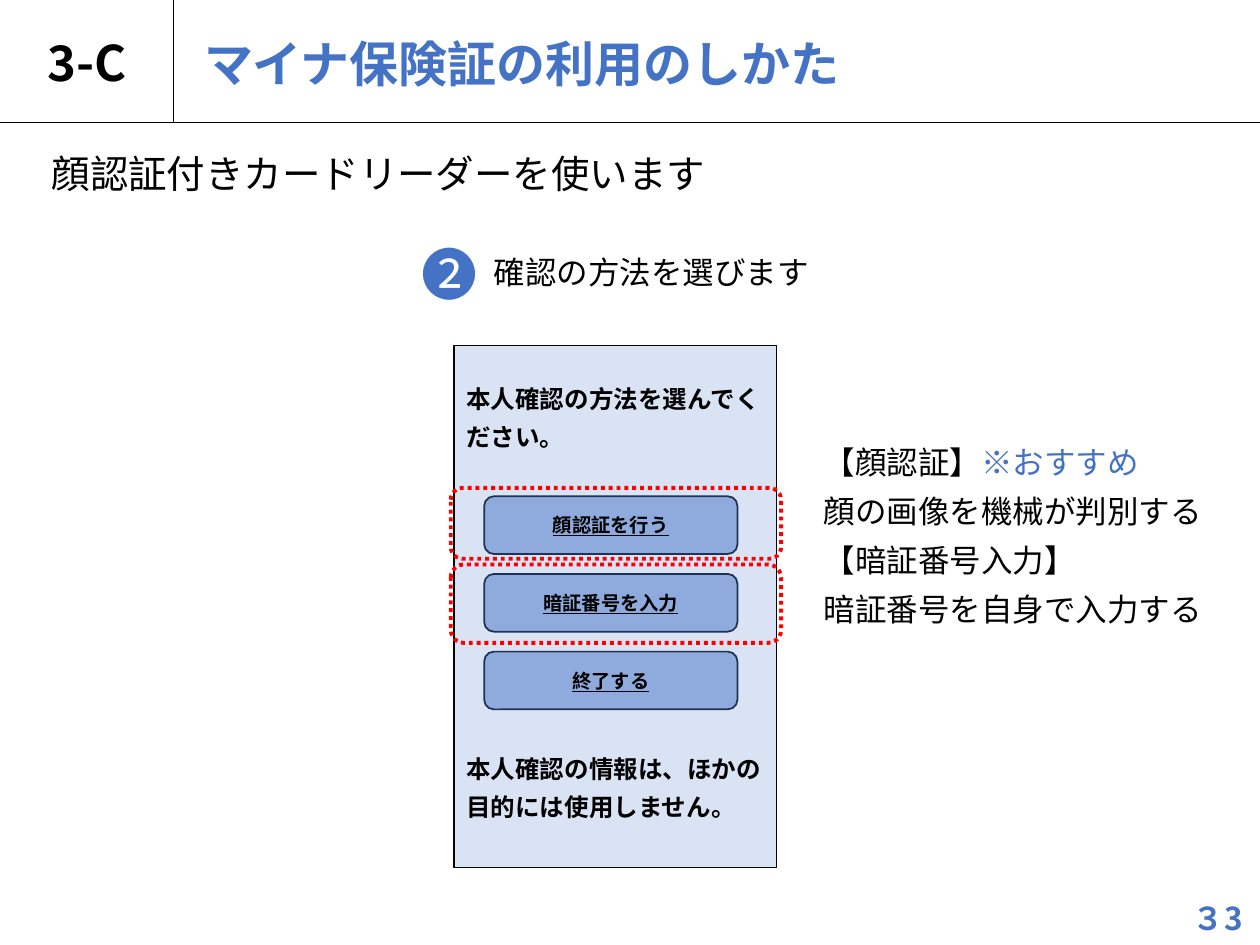
from lxml import etree
from pptx import Presentation
from pptx.dml.color import RGBColor
from pptx.enum import dml, shapes, text
from pptx.oxml.ns import qn
from pptx.util import Pt

FONT = "Noto Sans CJK JP"
BLACK, BLUE, RED = "000000", "4472C4", "FF0000"
PANEL, BUTTON, EDGE = "DAE3F3", "8FAADC", "1E3256"
LEFT, CENTER = text.PP_ALIGN.LEFT, text.PP_ALIGN.CENTER
TOP, MIDDLE, BOTTOM = text.MSO_ANCHOR.TOP, text.MSO_ANCHOR.MIDDLE, text.MSO_ANCHOR.BOTTOM


def rgb(value):
    return RGBColor.from_string(value)


def add_run(p, words, size=18, color=BLACK, bold=False, underline=False):
    r = p.add_run()
    r.text = words
    f = r.font
    f.size, f.name, f.bold, f.underline = Pt(size), FONT, bold, underline
    f.color.rgb = rgb(color)
    etree.SubElement(r._r.get_or_add_rPr(), qn("a:ea")).set("typeface", FONT)


def write(tf, paragraphs, align=LEFT, anchor=TOP, spacing=None, gap=0, wrap=True, **style):
    tf.auto_size = text.MSO_AUTO_SIZE.NONE
    tf.word_wrap = wrap
    tf.vertical_anchor = anchor
    for i, runs in enumerate(paragraphs):
        p = tf.add_paragraph() if i else tf.paragraphs[0]
        p.alignment = align
        p.space_before = Pt(gap if i else 0)
        if spacing:
            p.line_spacing = spacing
        for words, color in [(runs, BLACK)] if isinstance(runs, str) else runs:
            add_run(p, words, **{"color": color, **style})


class Deck:
    def __init__(self):
        self.prs = Presentation()
        self.prs.slide_width, self.prs.slide_height = Pt(720), Pt(540)
        self.s = self.prs.slides.add_slide(self.prs.slide_layouts[0])

    def placeholder(self, index, x, y, w, h, words, **style):
        sp = self.s.placeholders[index]
        sp.left, sp.top, sp.width, sp.height = Pt(x), Pt(y), Pt(w), Pt(h)
        write(sp.text_frame, [words], spacing=0.9, **style)

    def label(self, x, y, w, h, *paragraphs, **style):
        sp = self.s.shapes.add_textbox(Pt(x), Pt(y), Pt(w), Pt(h))
        write(sp.text_frame, paragraphs, **style)

    def box(self, kind, x, y, w, h, line, weight, fill=None, dash=None):
        sp = self.s.shapes.add_shape(kind, Pt(x), Pt(y), Pt(w), Pt(h))
        sp.shadow.inherit = False
        if fill:
            sp.fill.solid()
            sp.fill.fore_color.rgb = rgb(fill)
        else:
            sp.fill.background()
        sp.line.color.rgb = rgb(line)
        sp.line.width = Pt(weight)
        if dash:
            sp.line.dash_style = dash
        return sp.text_frame

    def rule(self, x1, y1, x2, y2):
        c = self.s.shapes.add_connector(
            shapes.MSO_CONNECTOR.STRAIGHT, Pt(x1), Pt(y1), Pt(x2), Pt(y2))
        c.line.color.rgb = rgb(BLACK)
        c.line.width = Pt(0.5)
        etree.SubElement(c._element.spPr, qn("a:effectLst"))


def main():
    d = Deck()
    rect, rounded = shapes.MSO_SHAPE.RECTANGLE, shapes.MSO_SHAPE.ROUNDED_RECTANGLE

    d.rule(99.4, 0, 99.4, 69.8)
    d.rule(0, 69.8, 720, 69.8)
    d.label(0, 0, 99.4, 70.6, "3-C", size=28, bold=True,
            align=CENTER, anchor=MIDDLE, wrap=False)
    d.placeholder(0, 109.4, 19, 597, 38, "マイナ保険証の利用のしかた",
                  size=28, color=BLUE, bold=True, anchor=BOTTOM)
    d.placeholder(1, 22.3, 85, 660, 44.6, "顔認証付きカードリーダーを使います", size=22)
    d.label(671.8, 510.5, 48.2, 28, "３3", color=BLUE, bold=True,
            align=CENTER, anchor=MIDDLE, wrap=False)

    d.label(234, 133.2, 36.7, 46, "❷", size=32, color=BLUE)
    d.label(275, 134.5, 299, 31, "確認の方法を選びます", spacing=Pt(28))
    d.label(463.7, 243.4, 243, 116,
            [("【顔認証】", BLACK), ("※おすすめ", BLUE)],
            "顔の画像を機械が判別する", "【暗証番号入力】", "暗証番号を自身で入力する",
            spacing=Pt(28))

    tf = d.box(rect, 259.4, 197.3, 184.4, 298.6, BLACK, 0.75, fill=PANEL)
    tf.margin_top = Pt(17)
    write(tf, ["本人確認の方法を選んでください。", "本人確認の情報は、ほかの目的には使用しません。"],
          size=14, bold=True, spacing=Pt(21.8), gap=168)
    for i, words in enumerate(["顔認証を行う", "暗証番号を入力", "終了する"]):
        tf = d.box(rounded, 276.7, 283.6 + 44.4 * i, 144.7, 33, EDGE, 1, fill=BUTTON)
        write(tf, [words], size=11, bold=True, underline=True, align=CENTER, anchor=MIDDLE)
    for y, h in [(278.8, 40.5), (322.6, 44.8)]:
        d.box(rounded, 257.6, y, 188.8, h, RED, 2.25, dash=dml.MSO_LINE.ROUND_DOT)

    d.prs.save("out.pptx")


if __name__ == "__main__":
    main()
